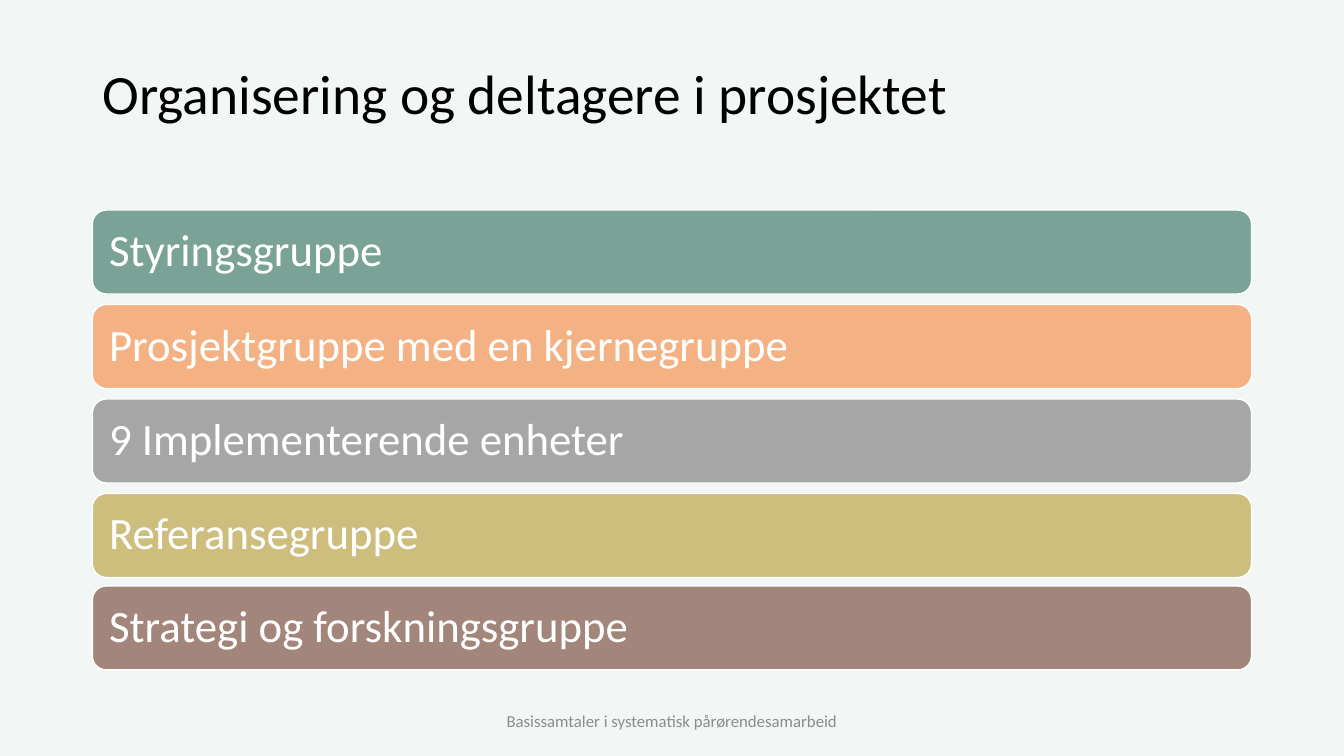
from pptx import Presentation
from pptx import util as u
from pptx.dml.color import RGBColor
from pptx.enum import shapes, text

PX = 9525
INK = {
    "back": "F2F6F4",
    "title": "000000",
    "foot": "8C8C8C",
    "white": "FFFFFF",
    "green": "7BA296",
    "peach": "F4B183",
    "gray": "A6A6A6",
    "sand": "CDBE7D",
    "brown": "A3867B",
}
GROUPS = [
    ("Styringsgruppe", "green", 200),
    ("Prosjektgruppe med en kjernegruppe", "peach", 290),
    ("9 Implementerende enheter", "gray", 380),
    ("Referansegruppe", "sand", 470),
    ("Strategi og forskningsgruppe", "brown", 558),
]


class Deck:
    font = "Calibri"

    def __init__(self):
        self.prs = Presentation()
        self.prs.slide_width, self.prs.slide_height = self.emu(1280, 720)
        self.slide = self.prs.slides.add_slide(self.prs.slide_layouts[5])
        self.paint(self.slide.background.fill, "back")

    def emu(self, *sizes):
        return [u.Emu(size * PX) for size in sizes]

    def paint(self, fill, ink):
        fill.solid()
        fill.fore_color.rgb = RGBColor.from_string(INK[ink])

    def label(self, shape, words, size, ink, align, anchor, space=None):
        frame = shape.text_frame
        frame.word_wrap = True
        frame.auto_size = text.MSO_AUTO_SIZE.NONE
        frame.vertical_anchor = anchor
        para = frame.paragraphs[0]
        para.alignment = align
        para.line_spacing = space
        run = para.add_run()
        run.text = words
        run.font.name = self.font
        run.font.size = u.Pt(size)
        run.font.color.rgb = RGBColor.from_string(INK[ink])

    def title(self, words, *box):
        shape = self.slide.shapes.title
        shape.left, shape.top, shape.width, shape.height = self.emu(*box)
        self.label(shape, words, 39.6, "title", text.PP_ALIGN.LEFT,
                   text.MSO_ANCHOR.TOP, 0.9)

    def footer(self, words, *box):
        shape = self.slide.shapes.add_textbox(*self.emu(*box))
        self.label(shape, words, 12, "foot", text.PP_ALIGN.CENTER,
                   text.MSO_ANCHOR.MIDDLE)

    def bar(self, words, ink, *box):
        shape = self.slide.shapes.add_shape(
            shapes.MSO_SHAPE.ROUNDED_RECTANGLE, *self.emu(*box))
        shape.shadow.inherit = False
        self.paint(shape.fill, ink)
        self.paint(shape.line.fill, "white")
        shape.line.width = u.Pt(1)
        frame = shape.text_frame
        frame.margin_left, frame.margin_right = self.emu(12, 12)
        self.label(shape, words, 32, "white", text.PP_ALIGN.LEFT,
                   text.MSO_ANCHOR.MIDDLE, 0.9)


def main():
    deck = Deck()
    deck.title("Organisering og deltagere i prosjektet", 88, 59, 1104, 119)
    deck.footer("Basissamtaler i systematisk pårørendesamarbeid",
                424, 667, 432, 38)
    for words, ink, top in GROUPS:
        deck.bar(words, ink, 88, top, 1104, 80)
    deck.prs.save("out.pptx")


if __name__ == "__main__":
    main()
